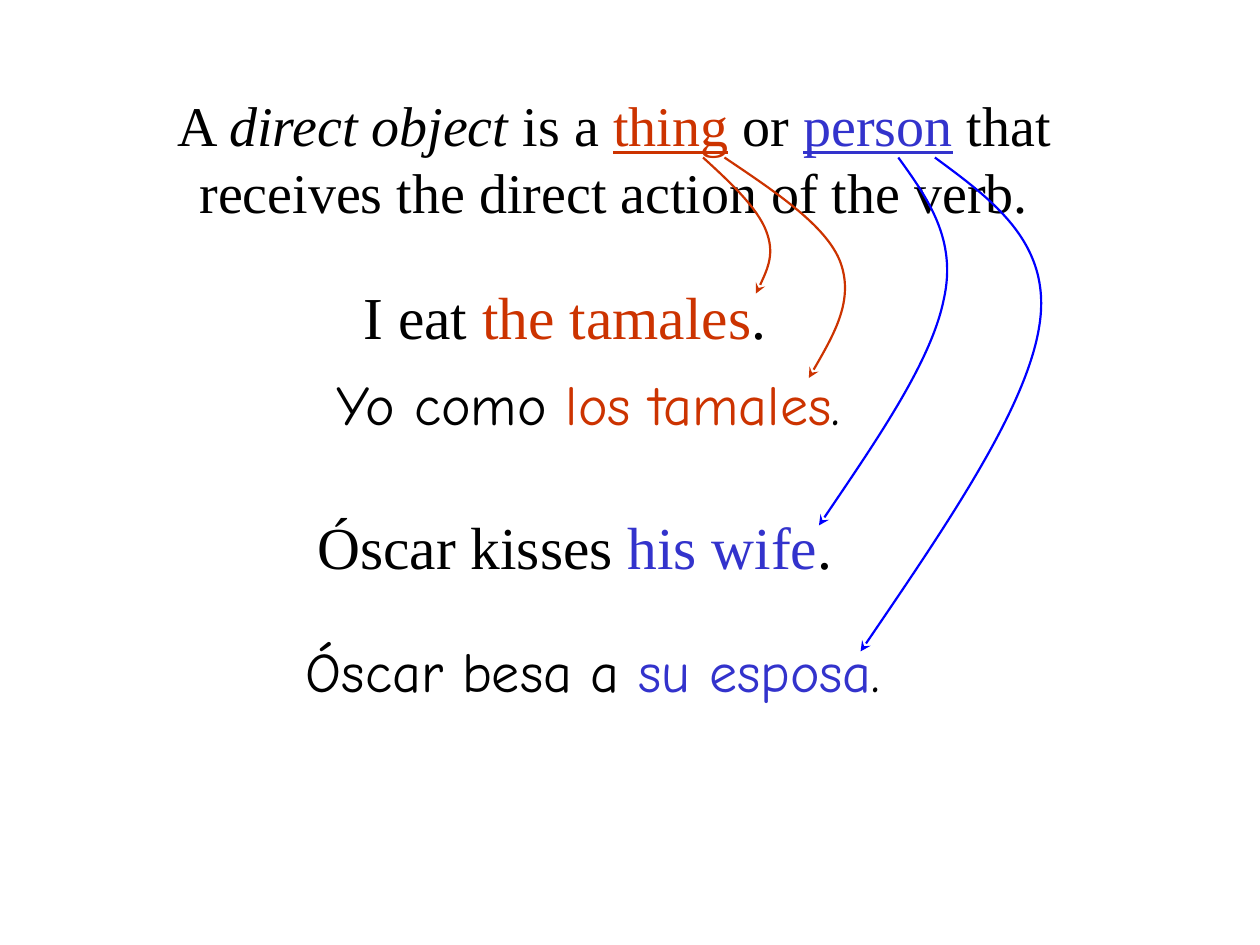
from pptx import Presentation
from pptx.dml.color import RGBColor
from pptx.enum.text import MSO_ANCHOR, MSO_AUTO_SIZE, PP_ALIGN
from pptx.oxml import parse_xml
from pptx.oxml.ns import nsdecls, qn
from pptx.util import Inches, Pt

BLACK = RGBColor(0x00, 0x00, 0x00)
RED = RGBColor(0xCC, 0x33, 0x00)
INDIGO = RGBColor(0x33, 0x33, 0xCC)
BLUE = RGBColor(0x00, 0x00, 0xFF)
SERIF, COMIC = "Times New Roman", "Comic Neue"

deck = Presentation()
deck.slide_width, deck.slide_height = Inches(10), Inches(7.5)
page = deck.slides.add_slide(deck.slide_layouts[0])
title = page.shapes.title
title.element.getparent().remove(title.element)


def write(box, spans, font_name, size, alignment):
    frame = box.text_frame
    frame_format = {"word_wrap": True, "auto_size": MSO_AUTO_SIZE.NONE,
                    "vertical_anchor": MSO_ANCHOR.TOP}
    for name, value in frame_format.items():
        setattr(frame, name, value)
    para = frame.paragraphs[0]
    para.alignment = alignment
    para.space_before = Pt(size * 0.2)
    for text, color, extra in spans:
        span = para.add_run()
        span.text = text
        span.font.color.rgb = color
        for name, value in {"name": font_name, "size": Pt(size), **extra}.items():
            setattr(span.font, name, value)


definition = page.placeholders[1]
place = {"left": 1.25, "top": 0.67, "width": 7.25, "height": 1.25}
for name, value in place.items():
    setattr(definition, name, Inches(value))
write(definition, [
    ("A ", BLACK, {}),
    ("direct object", BLACK, {"italic": True}),
    (" is a ", BLACK, {}),
    ("thing", RED, {"underline": True}),
    (" or ", BLACK, {}),
    ("person", INDIGO, {"underline": True}),
    (" that receives the direct action of the verb.", BLACK, {}),
], SERIF, 32, PP_ALIGN.CENTER)

examples = [
    (2.67, 2.17, 3.65, " I eat ", "the tamales", RED, SERIF, 34),
    (2.42, 2.88, 4.59, " Yo como ", "los tamales", RED, COMIC, 32),
    (2.42, 4, 4.42, "Óscar kisses ", "his wife", INDIGO, SERIF, 34),
    (2.33, 5, 5.42, "Óscar besa a ", "su esposa", INDIGO, COMIC, 32),
]
for left, top, width, opening, direct_object, color, font_name, size in examples:
    box = page.shapes.add_textbox(Inches(left), Inches(top), Inches(width), Inches(0.75))
    spans = [(opening, BLACK, {}), (direct_object, color, {}), (".", BLACK, {})]
    write(box, spans, font_name, size, PP_ALIGN.LEFT)

arrows = [
    (RED, [(5.58, 1.25), (5.8, 1.45), (6.01, 1.65), (6.08, 1.83),
           (6.15, 2.01), (6.08, 2.17), (6, 2.33)]),
    (RED, [(5.75, 1.25), (6.15, 1.52), (6.56, 1.79), (6.67, 2.08),
           (6.78, 2.38), (6.6, 2.69), (6.42, 3)]),
    (BLUE, [(7.13, 1.25), (7.36, 1.57), (7.6, 1.9), (7.49, 2.38),
            (7.39, 2.87), (6.94, 3.52), (6.5, 4.17)]),
    (BLUE, [(7.42, 1.25), (7.88, 1.59), (8.35, 1.93), (8.25, 2.58),
            (8.15, 3.24), (7.49, 4.2), (6.83, 5.17)]),
]
for color, points in arrows:
    start, *others = [(Inches(x), Inches(y)) for x, y in points]
    builder = page.shapes.build_freeform(*start)
    builder.add_line_segments(others, close=False)
    arrow = builder.convert_to_shape()
    arrow.shadow.inherit = False
    arrow.fill.background()
    arrow.line.color.rgb = color
    arrow.line.width = Pt(1.25)
    arrow.line._get_or_add_ln().append(
        parse_xml(f'<a:tailEnd {nsdecls("a")} type="stealth"/>'))
    segments = list(arrow.element.iter(qn("a:lnTo")))
    for first in range(0, len(segments), 3):
        curve = parse_xml(f'<a:cubicBezTo {nsdecls("a")}/>')
        segments[first].addprevious(curve)
        for segment in segments[first:first + 3]:
            curve.append(segment[0])
            segment.getparent().remove(segment)

deck.save("out.pptx")
